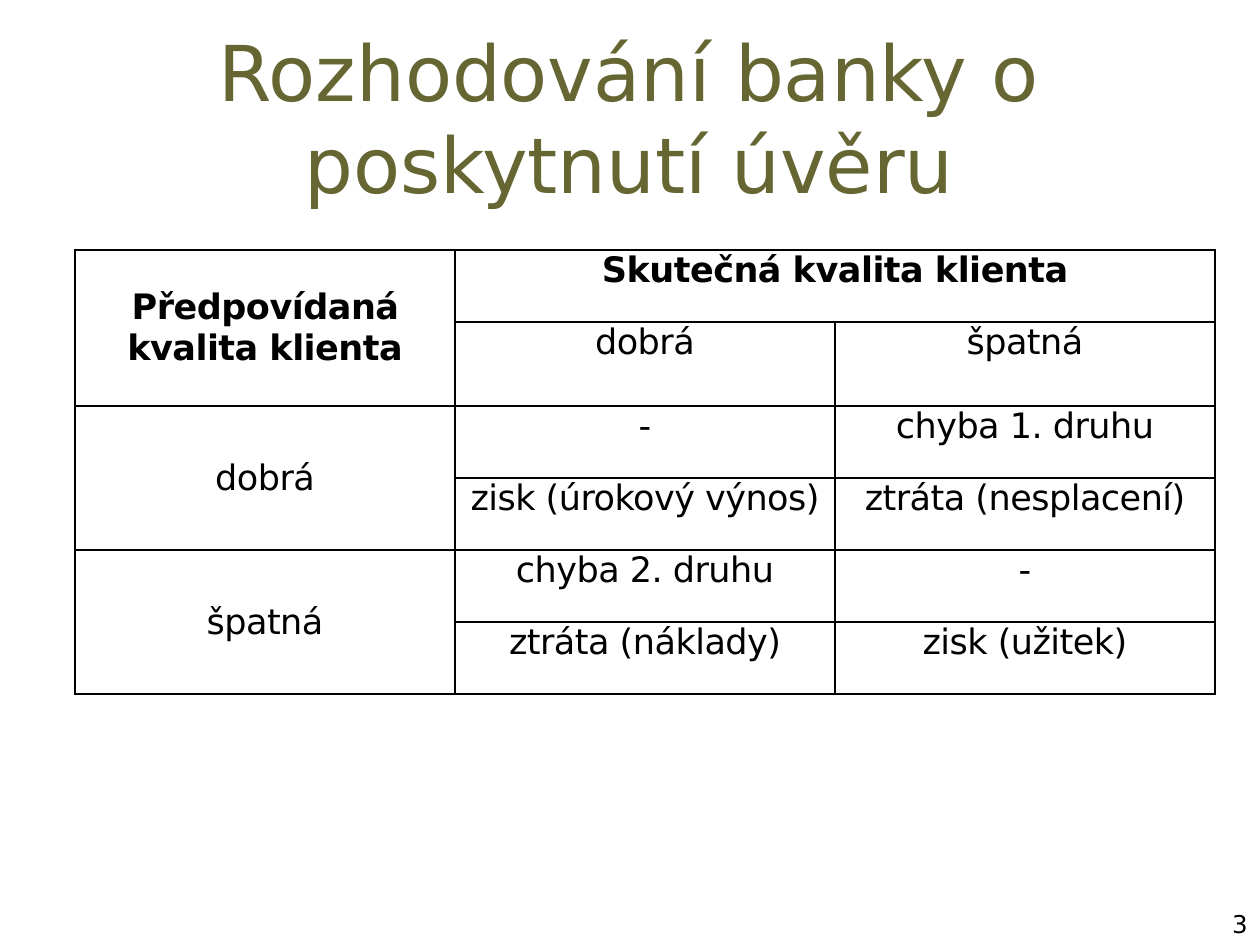
from dataclasses import dataclass

from lxml.etree import SubElement
from pptx import Presentation
from pptx.dml.color import RGBColor
from pptx.enum.text import MSO_ANCHOR, MSO_AUTO_SIZE, PP_ALIGN
from pptx.oxml.ns import qn
from pptx.util import Pt

EMU_PER_PX = 914400 / 126


@dataclass(frozen=True)
class Theme:
    font: str = "DejaVu Sans"
    olive: str = "666633"
    black: str = "000000"
    title_size: int = 44
    table_size: int = 20
    number_size: int = 14


theme = Theme()


def px(length):
    return round(length * EMU_PER_PX)


def write_text(frame, text, size, color=theme.black, bold=False,
               align=PP_ALIGN.CENTER, tracking=None):
    """Fill a text frame with one paragraph; tracking is in 1/100 pt."""
    frame.word_wrap = True
    paragraph = frame.paragraphs[0]
    paragraph.alignment = align
    run = paragraph.add_run()
    run.text = text
    run.font.name = theme.font
    run.font.size = Pt(size)
    run.font.bold = bold
    run.font.color.rgb = RGBColor.from_string(color)
    if tracking is not None:
        run.font._element.set("spc", str(tracking))


prs = Presentation()
prs.slide_width, prs.slide_height = px(1260), px(945)
slide = prs.slides.add_slide(prs.slide_layouts[5])

# Slide number
page_number = slide.shapes.add_textbox(px(966), px(903), px(294), px(42))
write_text(page_number.text_frame, "3", theme.number_size, align=PP_ALIGN.RIGHT)

# Title
title = slide.shapes.title
title.left, title.top, title.width, title.height = px(53), px(38), px(1153), px(158)
title.text_frame.auto_size = MSO_AUTO_SIZE.NONE
title.text_frame.vertical_anchor = MSO_ANCHOR.MIDDLE
write_text(title.text_frame, "Rozhodování banky o poskytnutí úvěru",
           theme.title_size, color=theme.olive)

# Decision table: None marks a cell covered by a merge
decisions = [
    ["Předpovídaná kvalita klienta", "Skutečná kvalita klienta", None],
    [None, "dobrá", "špatná"],
    ["dobrá", "-", "chyba 1. druhu"],
    [None, "zisk (úrokový výnos)", "ztráta (nesplacení)"],
    ["špatná", "chyba 2. druhu", "-"],
    [None, "ztráta (náklady)", "zisk (užitek)"],
]
column_width, row_height = 380, 72
table = slide.shapes.add_table(
    len(decisions), 3, px(75), px(250),
    px(3 * column_width), px(len(decisions) * row_height)).table
table.first_row = table.horz_banding = False

for row, texts in enumerate(decisions):
    for column, text in enumerate(texts):
        cell = table.cell(row, column)
        cell.margin_left = cell.margin_right = px(9)
        cell.margin_top = cell.margin_bottom = 0
        cell.vertical_anchor = MSO_ANCHOR.MIDDLE if column == 0 else MSO_ANCHOR.TOP
        properties = cell._tc.get_or_add_tcPr()
        for side in ("a:lnL", "a:lnR", "a:lnT", "a:lnB"):
            border = SubElement(properties, qn(side), w=str(Pt(1)))
            border_fill = SubElement(border, qn("a:solidFill"))
            SubElement(border_fill, qn("a:srgbClr"), val=theme.black)
        cell.fill.background()
        if text is not None:
            write_text(cell.text_frame, text, theme.table_size,
                       bold=row == 0, tracking=-30)

table.cell(0, 1).merge(table.cell(0, 2))
for top_row in range(0, len(decisions), 2):
    table.cell(top_row, 0).merge(table.cell(top_row + 1, 0))

prs.save("out.pptx")
